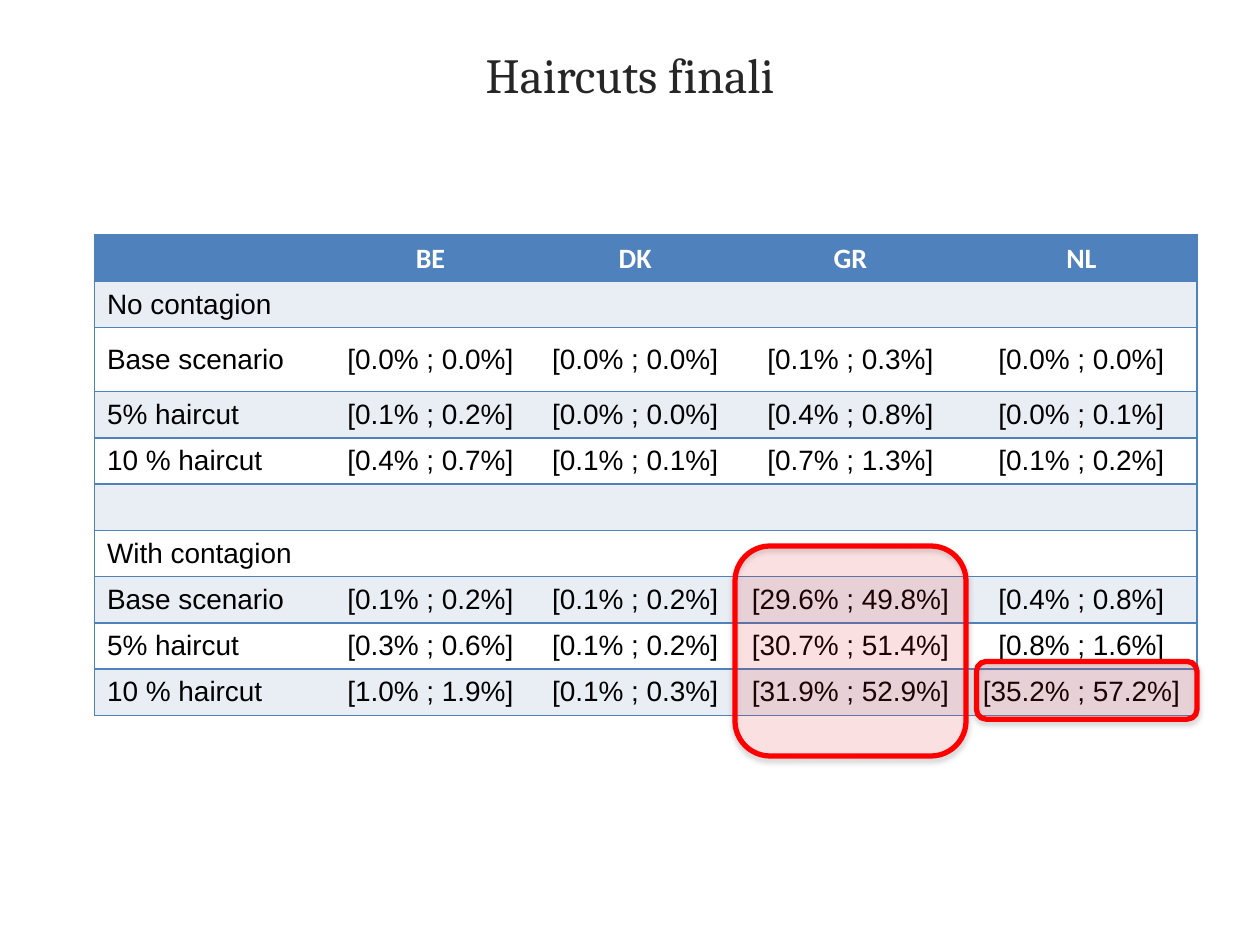
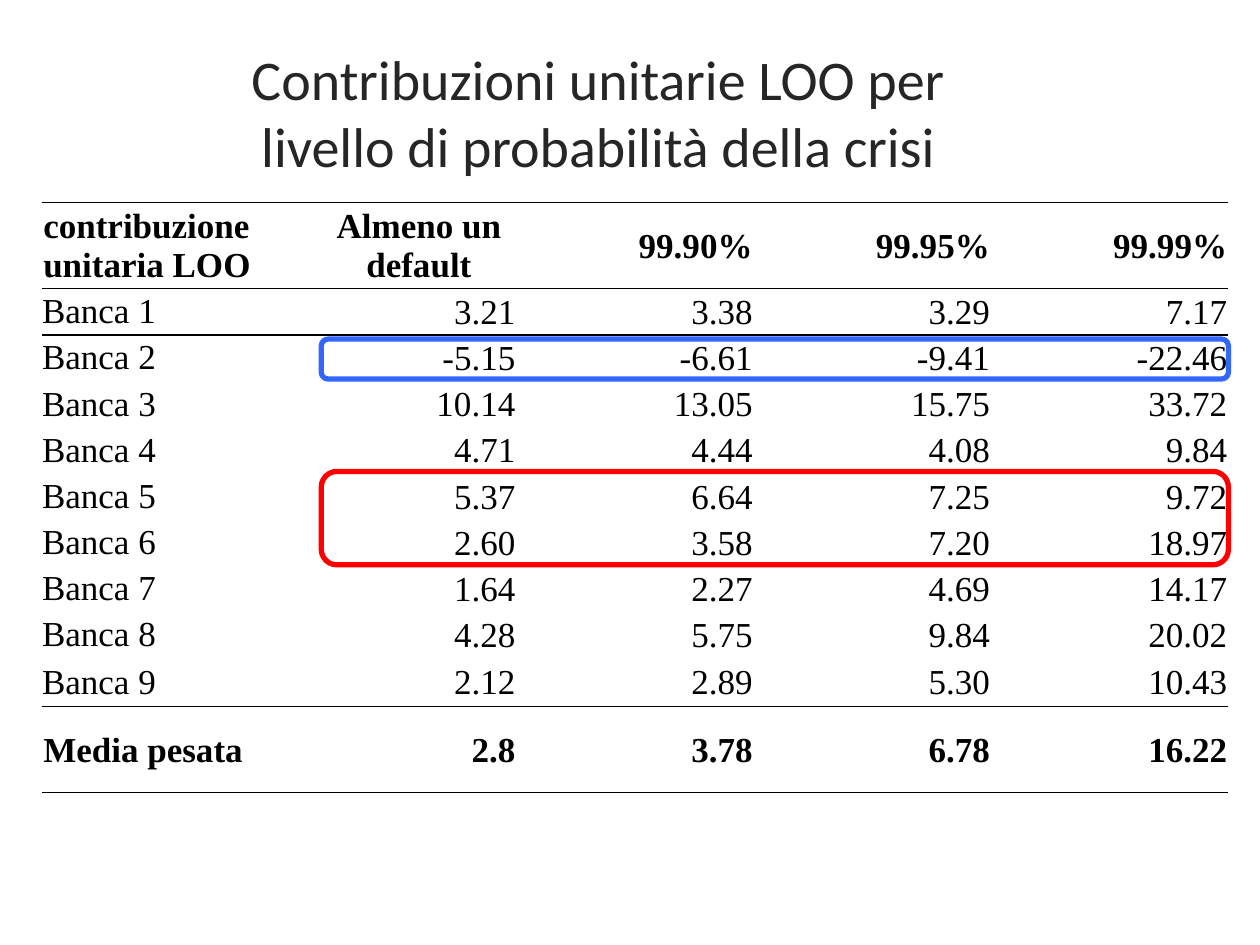
from lxml import etree
from pptx import Presentation
from pptx.dml.color import RGBColor
from pptx.enum.shapes import MSO_SHAPE
from pptx.enum.text import MSO_ANCHOR, PP_ALIGN
from pptx.oxml.ns import qn
from pptx.util import Inches, Pt

LEFT, CENTER, RIGHT = PP_ALIGN.LEFT, PP_ALIGN.CENTER, PP_ALIGN.RIGHT
MIDDLE = MSO_ANCHOR.MIDDLE
ROUNDED = MSO_SHAPE.ROUNDED_RECTANGLE
PLAIN_TABLE = "{2D5ABB26-0587-4C30-8999-92F81FD0307C}"

COLORS = {
    "title": "262626", "text": "000000", "white": "FFFFFF",
    "header": "4F81BD", "band": "E9EDF4",
    "red": "FF0000", "blue": "3366FF", "shadow": "808080",
}

# Grid: the slide is 120 columns wide and 90 rows high, in square units
prs = Presentation()
prs.slide_width, prs.slide_height = Inches(10), Inches(7.5)
UNIT = prs.slide_width / 120

HAIRCUTS = [
    ["", "BE", "DK", "GR", "NL"],
    ["No contagion", "", "", "", ""],
    ["Base scenario", "[0.0% ; 0.0%]", "[0.0% ; 0.0%]", "[0.1% ; 0.3%]", "[0.0% ; 0.0%]"],
    ["5% haircut", "[0.1% ; 0.2%]", "[0.0% ; 0.0%]", "[0.4% ; 0.8%]", "[0.0% ; 0.1%]"],
    ["10 % haircut", "[0.4% ; 0.7%]", "[0.1% ; 0.1%]", "[0.7% ; 1.3%]", "[0.1% ; 0.2%]"],
    ["", "", "", "", ""],
    ["With contagion", "", "", "", ""],
    ["Base scenario", "[0.1% ; 0.2%]", "[0.1% ; 0.2%]", "[29.6% ; 49.8%]", "[0.4% ; 0.8%]"],
    ["5% haircut", "[0.3% ; 0.6%]", "[0.1% ; 0.2%]", "[30.7% ; 51.4%]", "[0.8% ; 1.6%]"],
    ["10 % haircut", "[1.0% ; 1.9%]", "[0.1% ; 0.3%]", "[31.9% ; 52.9%]", "[35.2% ; 57.2%]"],
]

CONTRIBUTIONS = [
    ["contribuzione unitaria LOO", "Almeno un default", "99.90%", "99.95%", "99.99%"],
    ["Banca 1", "3.21", "3.38", "3.29", "7.17"],
    ["Banca 2", "-5.15", "-6.61", "-9.41", "-22.46"],
    ["Banca 3", "10.14", "13.05", "15.75", "33.72"],
    ["Banca 4", "4.71", "4.44", "4.08", "9.84"],
    ["Banca 5", "5.37", "6.64", "7.25", "9.72"],
    ["Banca 6", "2.60", "3.58", "7.20", "18.97"],
    ["Banca 7", "1.64", "2.27", "4.69", "14.17"],
    ["Banca 8", "4.28", "5.75", "9.84", "20.02"],
    ["Banca 9", "2.12", "2.89", "5.30", "10.43"],
    ["Media pesata", "2.8", "3.78", "6.78", "16.22"],
]

# Places are left, top, width, height in grid units
SLIDES = [
    {
        "title": "Haircuts finali", "title_at": (6, 3.6, 108, 15),
        "title_font": ("Cambria", 28),
        "rows": HAIRCUTS, "table_at": (9, 22.4, 105, 45.7),
        "widths": [22, 20, 19, 22, 22],
        "heights": [4.4] * 2 + [6.1] + [4.4] * 7,
        "boxed": True,
        "highlights": [("red", (70, 52, 22, 20)), ("red", (93, 63, 21, 5.5))],
    },
    {
        "title": "Contribuzioni unitarie LOO per livello di probabilità della crisi",
        "title_at": (21, 3.6, 72, 15), "title_font": ("Calibri", 32),
        "rows": CONTRIBUTIONS, "table_at": (4, 19.3, 113, 56.2),
        "widths": [26.6, 18.6] + [22.6] * 3,
        "heights": [8.2] + [4.4] * 8 + [4.6, 8.2],
        "boxed": False,
        "highlights": [("red", (30.6, 44.9, 86.4, 8.9)), ("blue", (30.6, 32.3, 86.4, 3.8))],
    },
]


def on_grid(place):
    return [round(length * UNIT) for length in place]


def set_text(frame, text, font, size, color, bold, align):
    frame.text = text
    paragraph = frame.paragraphs[0]
    paragraph.alignment = align
    if not text:
        paragraph._p.get_or_add_endParaRPr().set("sz", str(size * 100))
    for run in paragraph.runs:
        run.font.name, run.font.size, run.font.bold = font, Pt(size), bold
        run.font.color.rgb = RGBColor.from_string(COLORS[color])


for content in SLIDES:
    slide = prs.slides.add_slide(prs.slide_layouts[6])
    rows, boxed = content["rows"], content["boxed"]
    last_row, last_col = len(rows) - 1, len(rows[0]) - 1

    # Title
    title = slide.shapes.add_textbox(*on_grid(content["title_at"])).text_frame
    title.word_wrap = True
    set_text(title, content["title"], *content["title_font"], "title", False, CENTER)

    # Table
    table = slide.shapes.add_table(len(rows), len(rows[0]), *on_grid(content["table_at"])).table
    table._tbl.tblPr.find(qn("a:tableStyleId")).text = PLAIN_TABLE
    for column, width in zip(table.columns, on_grid(content["widths"])):
        column.width = width
    for row, height in zip(table.rows, on_grid(content["heights"])):
        row.height = height

    for r, values in enumerate(rows):
        for c, value in enumerate(values):
            cell = table.cell(r, c)
            header, label = r == 0, c == 0
            if boxed:
                font, size, bold = "Calibri" if header else "Arial", 16, header
                color = "white" if header else "text"
                align = LEFT if label else CENTER
                margins = (0.1, 0.05, 0.1, 0.05)
                edges = {"lnL": c == 0, "lnR": c == last_col, "lnT": True, "lnB": True}
                fill = "header" if header else "band" if r % 2 else "white"
            else:
                font, size, color = "Times New Roman", 20, "text"
                bold = r in (0, last_row)
                align = LEFT if label else CENTER if header and c == 1 else RIGHT
                margins = (0, 0, 0, 0) if label and not bold else (0.01, 0.01, 0.01, 0)
                edges = {"lnT": r in (0, 1, last_row), "lnB": r in (0, last_row - 1, last_row)}
                fill = None
            set_text(cell.text_frame, value, font, size, color, bold, align)
            cell.vertical_anchor = MIDDLE
            cell.margin_left, cell.margin_top, cell.margin_right, cell.margin_bottom = map(Inches, margins)

            # Borders go before the fill in the cell properties
            for edge in [name for name, drawn in edges.items() if drawn]:
                line = etree.SubElement(cell._tc.get_or_add_tcPr(), qn("a:" + edge), w=str(Pt(1)))
                solid = etree.SubElement(line, qn("a:solidFill"))
                etree.SubElement(solid, qn("a:srgbClr"), val=COLORS["header" if boxed else "text"])
            if fill:
                cell.fill.solid()
                cell.fill.fore_color.rgb = RGBColor.from_string(COLORS[fill])
            else:
                cell.fill.background()

    # Highlights around the notable values
    for color, place in content["highlights"]:
        highlight = slide.shapes.add_shape(ROUNDED, *on_grid(place))
        highlight.shadow.inherit = False
        highlight.line.color.rgb = RGBColor.from_string(COLORS[color])
        highlight.line.width = Pt(3)
        if not boxed:
            highlight.fill.background()
            continue
        highlight.fill.solid()
        highlight.fill.fore_color.rgb = RGBColor.from_string(COLORS[color])
        properties = highlight._element.spPr
        tint = properties.find(qn("a:solidFill")).find(qn("a:srgbClr"))
        etree.SubElement(tint, qn("a:alpha"), val="10000")
        shadow = etree.SubElement(
            properties.find(qn("a:effectLst")), qn("a:outerShdw"),
            blurRad=str(Pt(3.1)), dist=str(Pt(1.8)), dir="5400000", rotWithShape="0")
        shade = etree.SubElement(shadow, qn("a:srgbClr"), val=COLORS["shadow"])
        etree.SubElement(shade, qn("a:alpha"), val="35000")

prs.save("out.pptx")
